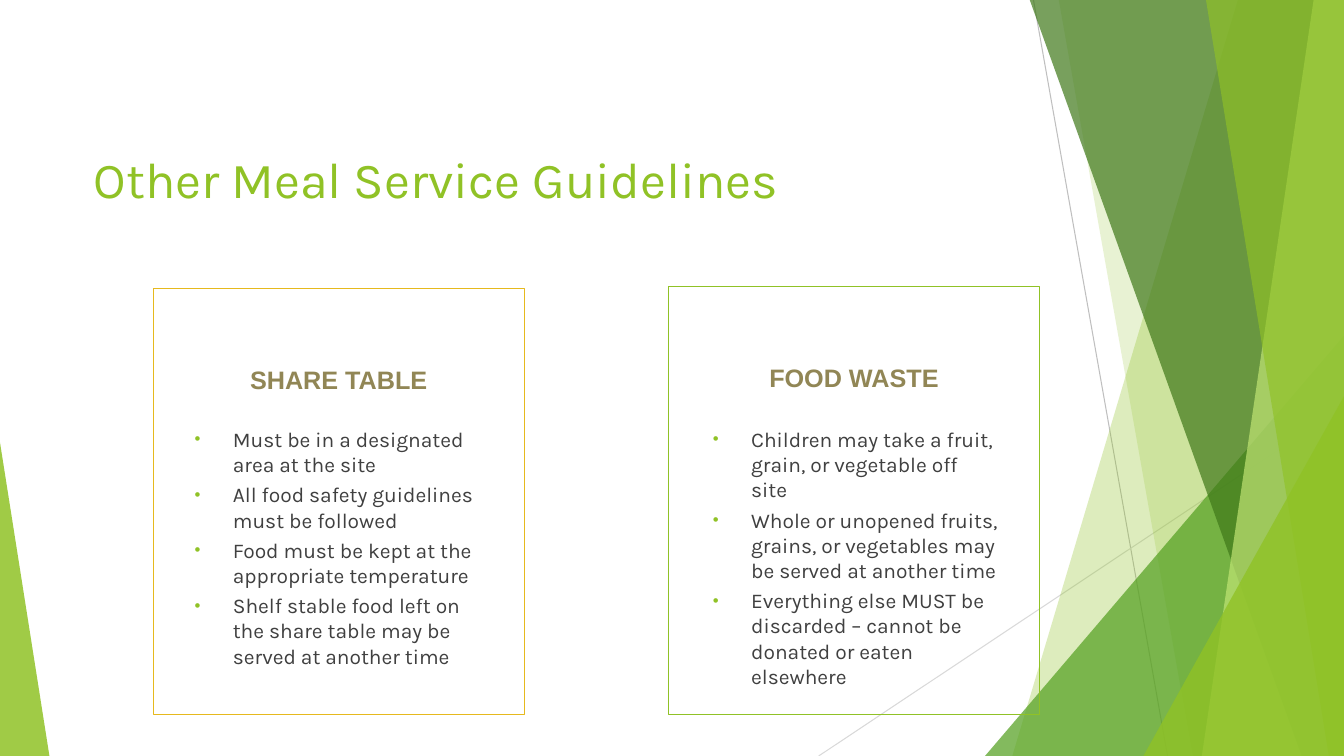
from lxml.etree import SubElement
from pptx import Presentation
from pptx.dml.color import RGBColor
from pptx.enum.shapes import MSO_CONNECTOR, MSO_SHAPE
from pptx.enum.text import MSO_ANCHOR, MSO_AUTO_SIZE, PP_ALIGN
from pptx.oxml.ns import qn
from pptx.util import Inches, Pt

COLORS = {
    "lime": "90C226", "green": "54A021", "forest": "3F7819", "pale": "C0E474",
    "gold": "E6B91E", "khaki": "918655", "text": "404040",
    "ray_dark": "BFBFBF", "ray_light": "D9D9D9",
}
WIDTH, HEIGHT, TOP = 13.33, 7.5, -0.01

# Backdrop: rays as start, end, color
RAYS = [((10.25, 0), (11.58, HEIGHT), "ray_dark"),
        ((WIDTH, 4.03), (8.12, HEIGHT), "ray_light")]
# Bands reach the right edge: left x at top, left x at bottom, color, opacity %
BACK_BANDS = [(12.28, 10.04, "lime", 30), (10.5, 11.83, "lime", 20)]
FRONT_BANDS = [(10.21, 12.91, "forest", 70), (13.03, 11.92, "pale", 70),
               (11.96, 13.18, "lime", 65)]

SHARE_RULES = [
    "Must be in a designated area at the site",
    "All food safety guidelines must be followed",
    "Food must be kept at the appropriate temperature",
    "Shelf stable food left on the share table may be served at another time",
]
WASTE_RULES = [
    "Children may take a fruit, grain, or vegetable off site",
    "Whole or unopened fruits, grains, or vegetables may be served at another time",
    "Everything else MUST be discarded – cannot be donated or eaten elsewhere",
]


def rgb(color):
    return RGBColor.from_string(COLORS[color])


def paint(shape, color, opacity):
    shape.shadow.inherit = False
    shape.line.fill.background()
    shape.fill.solid()
    shape.fill.fore_color.rgb = rgb(color)
    color_xml = shape.fill._xPr.find(qn("a:solidFill"))[0]
    SubElement(color_xml, qn("a:alpha"), val=str(opacity * 1000))


def add_ray(slide, start, end, color):
    points = [Inches(value) for value in (*start, *end)]
    ray = slide.shapes.add_connector(MSO_CONNECTOR.STRAIGHT, *points)
    ray.line.color.rgb = rgb(color)
    ray.line.width = Pt(0.75)
    SubElement(ray._element.spPr, qn("a:effectLst"))


def add_band(slide, top_x, bottom_x, color, opacity):
    corners = [(WIDTH, TOP), (WIDTH, HEIGHT), (bottom_x, HEIGHT)]
    outline = slide.shapes.build_freeform(Inches(top_x), Inches(TOP))
    outline.add_line_segments([(Inches(x), Inches(y)) for x, y in corners])
    paint(outline.convert_to_shape(), color, opacity)


def add_wedge(slide, left, top, width, apex, color, opacity):
    wedge = slide.shapes.add_shape(
        MSO_SHAPE.ISOSCELES_TRIANGLE, Inches(left), Inches(top),
        Inches(width), Inches(HEIGHT - top))
    wedge.adjustments[0] = apex
    paint(wedge, color, opacity)


def add_backdrop(slide):
    for ray in RAYS:
        add_ray(slide, *ray)
    for band in BACK_BANDS:
        add_band(slide, *band)
    add_wedge(slide, 9.77, 3.33, 3.56, 1, "green", 72)
    for band in FRONT_BANDS:
        add_band(slide, *band)
    add_wedge(slide, 11.34, 3.93, 1.99, 1, "lime", 80)
    add_wedge(slide, 0, 4.39, 0.49, 0, "lime", 85)


def place(holder, left, top, width, height, anchor=MSO_ANCHOR.TOP):
    holder.left, holder.top = Inches(left), Inches(top)
    holder.width, holder.height = Inches(width), Inches(height)
    frame = holder.text_frame
    frame.word_wrap = True
    frame.auto_size = MSO_AUTO_SIZE.NONE
    frame.vertical_anchor = anchor
    # Bring the placeholder in front of the backdrop
    holder._element.getparent().append(holder._element)
    return frame


def style(paragraph, font_name, size, color, bold=False):
    for run in paragraph.runs:
        run.font.name = font_name
        run.font.size = Pt(size)
        run.font.bold = bold
        run.font.color.rgb = rgb(color)


def fill_title(title, text):
    frame = place(title, 0.83, 1.35, 11.67, 0.84, MSO_ANCHOR.MIDDLE)
    frame.text = text
    frame.paragraphs[0].alignment = PP_ALIGN.LEFT
    style(frame.paragraphs[0], "Karla", 36, "lime")


def fill_card(card, heading, left, top, height, border):
    frame = place(card, left, top, 3.68, height)
    frame.margin_top = Inches(0.75)
    card.line.color.rgb = rgb(border)
    card.line.width = Pt(1)
    frame.text = heading
    paragraph = frame.paragraphs[0]
    paragraph.alignment = PP_ALIGN.CENTER
    paragraph.space_before = Pt(0)
    style(paragraph, "Arial", 18, "khaki", bold=True)


def add_bullet(paragraph):
    props = paragraph._p.get_or_add_pPr()
    props.set("marL", str(Inches(0.38)))
    props.set("indent", str(-Inches(0.38)))
    bullet_color = SubElement(props, qn("a:buClr"))
    SubElement(bullet_color, qn("a:srgbClr"), val=COLORS["lime"])
    SubElement(props, qn("a:buSzPct"), val="80000")
    SubElement(props, qn("a:buFont"), typeface="Arial")
    SubElement(props, qn("a:buChar"), char="•")


def fill_rules(holder, rules, left):
    frame = place(holder, left, 4.18, 3.03, 2.83)
    frame.text = "\n".join(rules)
    for index, paragraph in enumerate(frame.paragraphs):
        paragraph.space_before = Pt(3.6 if index else 0)
        add_bullet(paragraph)
        style(paragraph, "Karla", 15, "text")


def main():
    deck = Presentation()
    deck.slide_width, deck.slide_height = Inches(WIDTH), Inches(HEIGHT)
    slide = deck.slides.add_slide(deck.slide_layouts.get_by_name("Comparison"))
    holders = {holder.placeholder_format.idx: holder
               for holder in slide.placeholders}

    add_backdrop(slide)
    fill_title(holders[0], "Other Meal Service Guidelines")

    # Share table column
    fill_card(holders[1], "SHARE TABLE", 1.52, 2.86, 4.23, "gold")
    fill_rules(holders[2], SHARE_RULES, 1.83)

    # Food waste column
    fill_card(holders[3], "FOOD WASTE", 6.63, 2.84, 4.25, "lime")
    fill_rules(holders[4], WASTE_RULES, 6.97)

    deck.save("out.pptx")


if __name__ == "__main__":
    main()
